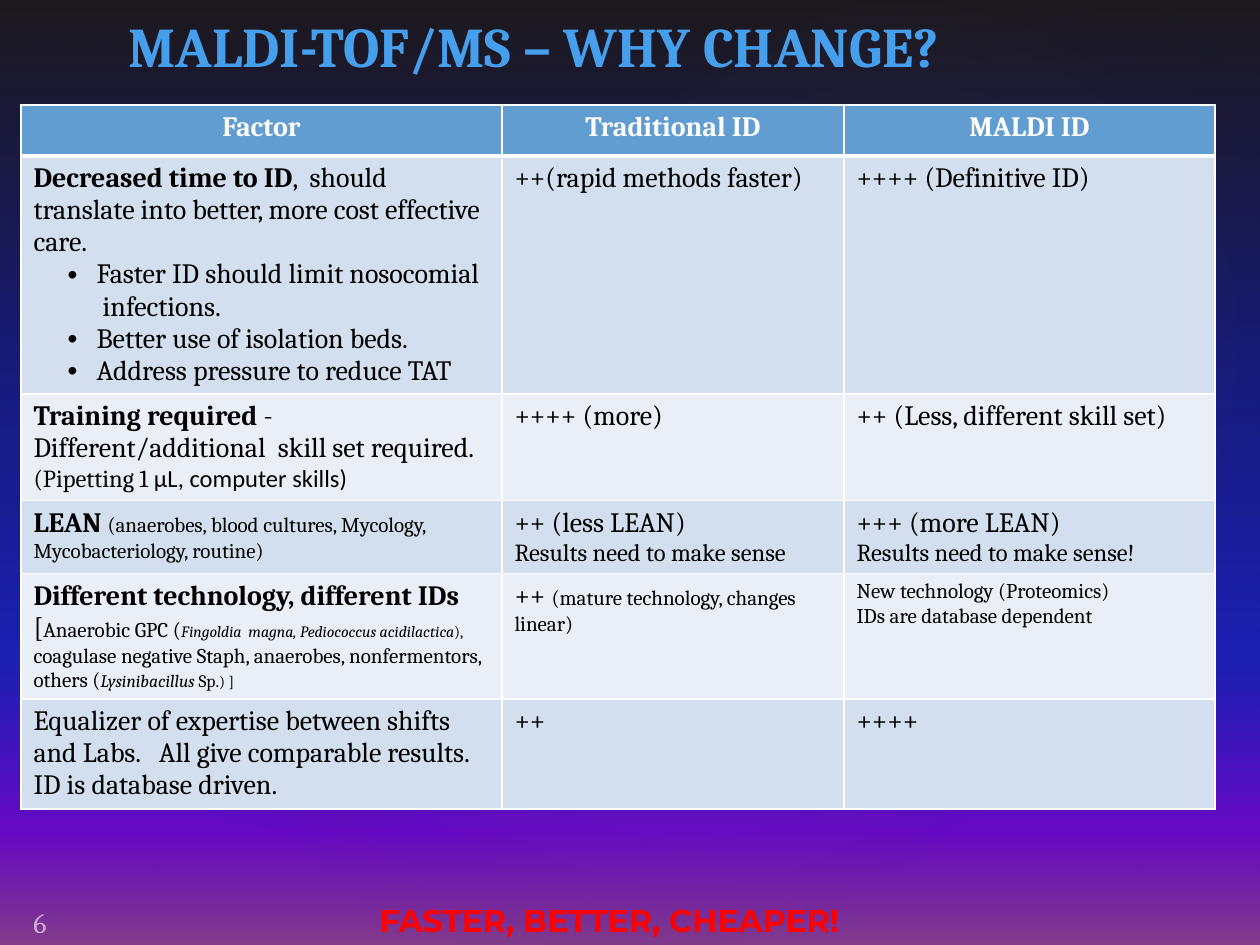
from lxml.etree import SubElement
from pptx import Presentation
from pptx.dml.color import RGBColor
from pptx.enum.shapes import MSO_SHAPE as Shape
from pptx.enum.text import MSO_ANCHOR as Anchor, MSO_AUTO_SIZE as AutoSize, PP_ALIGN as Align
from pptx.oxml.ns import qn
from pptx.util import Pt

WHITE = RGBColor(0xFF, 0xFF, 0xFF)
BLACK = RGBColor(0x00, 0x00, 0x00)
RED = RGBColor(0xFF, 0x00, 0x00)
SKY = RGBColor(0x46, 0x9F, 0xED)
HEADER = RGBColor(0x62, 0x9D, 0xD1)
BAND_DARK = RGBColor(0xD3, 0xDF, 0xEE)
BAND_LIGHT = RGBColor(0xEA, 0xEF, 0xF7)
NAVY = RGBColor(0x0A, 0x12, 0x8C)
BLUE = RGBColor(0x18, 0x1C, 0xC7)
VIOLET = RGBColor(0x70, 0x05, 0xD4)
PLUM = RGBColor(0x8C, 0x3D, 0x91)
SMOKE = RGBColor(0x50, 0x46, 0x52)
MIDNIGHT = RGBColor(0x24, 0x28, 0x52)
HAZE = RGBColor(0xC4, 0xBC, 0xC6)

BOLD = {"bold": True}
MEDIUM = {"size": Pt(14)}
SMALL = {"size": Pt(12)}
TINY = {"size": Pt(9)}
TINY_ITALIC = {"size": Pt(9), "italic": True}
INDENT = {"marL": 63, "indent": 0}
BULLET = {"marL": 63, "indent": -29, "bullet": "•"}

BACKDROP = [(0, BLACK, 100), (40, NAVY, 100), (70, BLUE, 100), (88, VIOLET, 100), (100, PLUM, 100)]
VEIL = [(0, SMOKE, 36), (100, MIDNIGHT, 10)]
GLOWS = [
    ((189, 144, 998, 786), 328.7, 7),
    ((-38, 161, 764, 617), 294.3, 8),
    ((451, 16, 893, 655), 328.7, 8),
]

COLUMNS = [481, 342, 371]
ROWS = [51, 238, 106, 73, 125, 110]
CELLS = [
    [[[("Factor", BOLD)]], [[("Traditional ID", BOLD)]], [[("MALDI ID", BOLD)]]],
    [
        [
            [("Decreased time to ID", BOLD),
             (",  should translate into better, more cost effective  care.", {})],
            [BULLET, ("Faster ID should limit nosocomial", {})],
            [INDENT, (" infections.", {})],
            [BULLET, ("Better use of isolation beds.", {})],
            [BULLET, ("Address pressure to reduce TAT", {})],
        ],
        [[("++(rapid methods faster)", {})]],
        [[("++++ (Definitive ID)", {})]],
    ],
    [
        [[("Training required ", BOLD),
          ("- Different/additional  skill set required.  ", {}),
          ("(Pipetting 1 ", MEDIUM),
          ("μL, computer skills)", {**MEDIUM, "name": "Calibri"})]],
        [[("++++ (more)", {})]],
        [[("++ (Less, different skill set)", {})]],
    ],
    [
        [[("LEAN ", BOLD),
          ("(anaerobes, blood cultures, Mycology, Mycobacteriology, routine)", SMALL)]],
        [[("++ (less LEAN)", {})], [("Results need to make sense", MEDIUM)]],
        [[("+++ (more LEAN)", {})], [("Results need to make sense!", MEDIUM)]],
    ],
    [
        [[("Different technology, different IDs ", BOLD),
          ("[", {}),
          ("Anaerobic GPC (", SMALL),
          ("Fingoldia  magna, Pediococcus acidilactica", TINY_ITALIC),
          ("), ", TINY),
          ("coagulase negative Staph, anaerobes, nonfermentors, others (", SMALL),
          ("Lysinibacillus", {"size": Pt(10), "italic": True}),
          (" Sp.", {"size": Pt(10)}),
          (") ]", TINY)]],
        [[("++ ", {}), ("(mature technology, changes linear)", SMALL)]],
        [[("New technology (Proteomics)", SMALL)], [("IDs are database dependent", SMALL)]],
    ],
    [
        [[("Equalizer of expertise between shifts and Labs.   All give comparable results.  "
           "ID is database driven.", {})]],
        [[("++", {})]],
        [[("++++", {})]],
    ],
]


class SlideBuilder:
    """Holds the slide and its style, and adds each kind of element."""

    scale = 914400 / 126
    font = {"name": "Cambria", "size": Pt(16), "bold": False, "italic": False}

    def __init__(self):
        self.presentation = Presentation()
        self.presentation.slide_width = self.px(1260)
        self.presentation.slide_height = self.px(945)
        self.slide = self.presentation.slides.add_slide(self.presentation.slide_layouts[5])

    def px(self, length):
        return round(length * self.scale)

    def gradient(self, fill, properties, stops, circle=False):
        fill.gradient()
        gradient = properties.find(qn("a:gradFill"))
        for child in list(gradient):
            gradient.remove(child)
        stop_list = SubElement(gradient, qn("a:gsLst"))
        for position, color, opacity in stops:
            stop = SubElement(stop_list, qn("a:gs"), pos=str(position * 1000))
            tint = SubElement(stop, qn("a:srgbClr"), val=str(color))
            if opacity < 100:
                SubElement(tint, qn("a:alpha"), val=str(opacity * 1000))
        if circle:
            shade = SubElement(gradient, qn("a:path"), path="circle")
            SubElement(shade, qn("a:fillToRect"), dict.fromkeys("ltrb", "50000"))
        else:
            SubElement(gradient, qn("a:lin"), ang="5400000", scaled="0")

    def background(self, stops):
        fill = self.slide.background.fill
        fill.gradient()
        properties = next(self.slide.element.iter(qn("p:bgPr")))
        self.gradient(fill, properties, stops)

    def decoration(self, kind, box, stops, rotation=0, circle=False):
        shape = self.slide.shapes.add_shape(kind, *map(self.px, box))
        shape.shadow.inherit = False
        shape.rotation = rotation
        shape.line.fill.background()
        self.gradient(shape.fill, shape.element.spPr, stops, circle)

    def add_runs(self, paragraph, runs, color, align=Align.LEFT):
        paragraph.alignment = align
        for item in runs:
            if isinstance(item, dict):
                self.indent(paragraph, item)
                continue
            text, style = item
            run = paragraph.add_run()
            run.text = text
            for name, value in {**self.font, **style}.items():
                setattr(run.font, name, value)
            run.font.color.rgb = color

    def indent(self, paragraph, style):
        properties = paragraph._p.get_or_add_pPr()
        for name in ("marL", "indent"):
            properties.set(name, str(self.px(style[name])))
        if "bullet" in style:
            SubElement(properties, qn("a:buFont"), typeface="Arial")
            SubElement(properties, qn("a:buChar"), char=style["bullet"])

    def fill_text(self, shape, box, text, style, color, anchor=Anchor.TOP):
        for name, value in zip(("left", "top", "width", "height"), box):
            setattr(shape, name, self.px(value))
        frame = shape.text_frame
        layout = {"word_wrap": True, "auto_size": AutoSize.NONE, "vertical_anchor": anchor}
        for name, value in layout.items():
            setattr(frame, name, value)
        self.add_runs(frame.paragraphs[0], [(text, style)], color)
        return shape

    def title(self, *content):
        title = self.fill_text(self.slide.shapes.title, *content)
        self.slide.shapes.element.append(title.element)

    def text(self, *content):
        return self.fill_text(self.slide.shapes.add_textbox(0, 0, 0, 0), *content)

    def slide_number(self, box, text):
        shape = self.text(box, text, {}, WHITE, Anchor.BOTTOM)
        shape.text_frame.margin_bottom = self.px(1)
        tint = next(shape.element.iter(qn("a:srgbClr")))
        SubElement(tint, qn("a:alpha"), val="60000")

    def borders(self, cell, row):
        properties = cell._tc.get_or_add_tcPr()
        widths = {"lnL": 1, "lnR": 1, "lnT": 3 if row == 1 else 1, "lnB": 3 if row == 0 else 1}
        for side, width in widths.items():
            line = SubElement(properties, qn(f"a:{side}"), w=str(int(Pt(width))))
            solid = SubElement(line, qn("a:solidFill"))
            SubElement(solid, qn("a:srgbClr"), val=str(WHITE))

    def table(self, left, top, columns, rows, cells):
        box = map(self.px, (left, top, sum(columns), sum(rows)))
        table = self.slide.shapes.add_table(len(rows), len(columns), *box).table
        for column, width in zip(table.columns, columns):
            column.width = self.px(width)
        for index, (row, height, contents) in enumerate(zip(table.rows, rows, cells)):
            row.height = self.px(height)
            band = BAND_DARK if index % 2 else BAND_LIGHT
            for cell, paragraphs in zip(row.cells, contents):
                self.borders(cell, index)
                cell.fill.solid()
                cell.fill.fore_color.rgb = band if index else HEADER
                for number, runs in enumerate(paragraphs):
                    frame = cell.text_frame
                    paragraph = frame.add_paragraph() if number else frame.paragraphs[0]
                    self.add_runs(paragraph, runs, BLACK if index else WHITE,
                                  Align.LEFT if index else Align.CENTER)


def main():
    builder = SlideBuilder()
    builder.background(BACKDROP)
    builder.decoration(Shape.RECTANGLE, (0, 0, 1260, 945), VEIL)
    for box, rotation, opacity in GLOWS:
        glow = [(0, HAZE, opacity), (58, MIDNIGHT, 0)]
        builder.decoration(Shape.OVAL, box, glow, rotation, circle=True)
    builder.table(21, 105, COLUMNS, ROWS, CELLS)
    builder.title((116, 5, 970, 81), "MALDI-TOF/MS – WHY CHANGE?", {"size": Pt(32), **BOLD}, SKY)
    builder.text((367, 895, 527, 50), "FASTER, BETTER, CHEAPER!",
                 {"name": "Montserrat", "size": Pt(18), **BOLD}, RED)
    builder.slide_number((21, 898, 294, 42), "6")
    builder.presentation.save("out.pptx")


if __name__ == "__main__":
    main()
